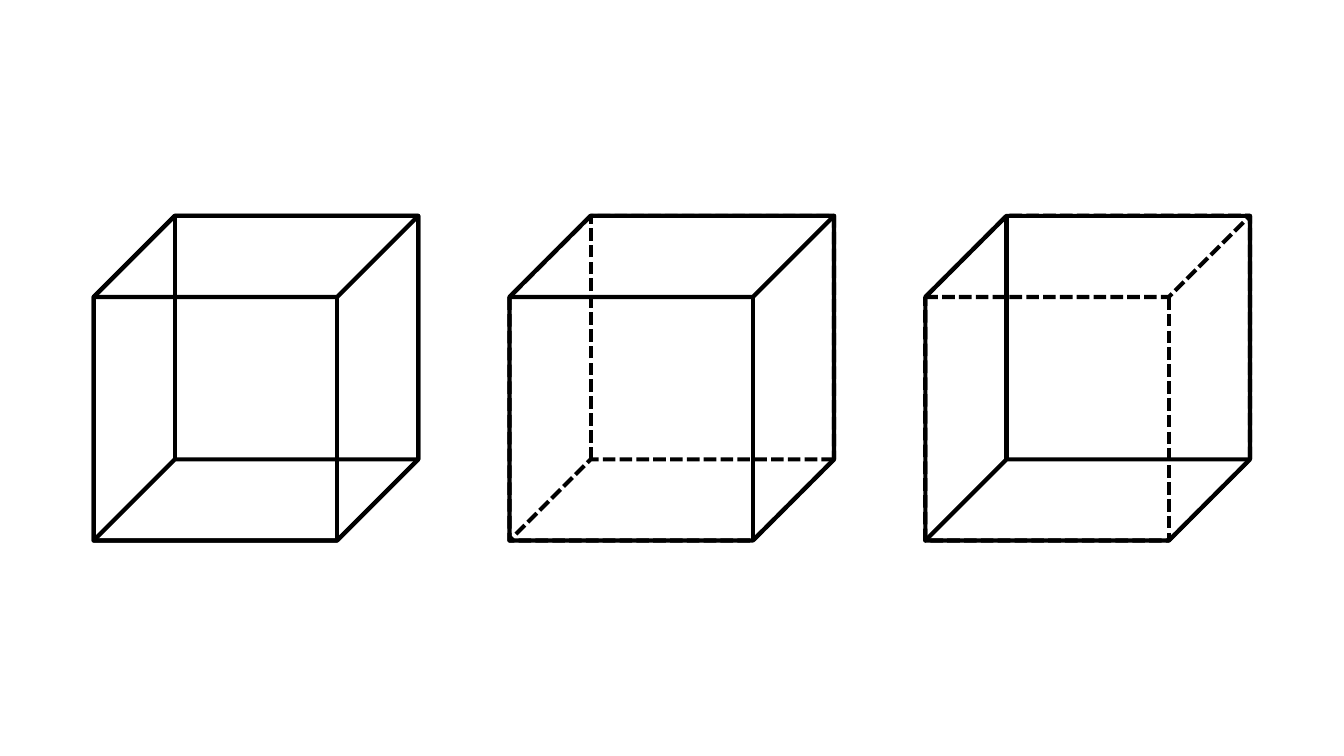
"""Draw three wire cubes, each made of two outlines turned half a circle apart."""
from dataclasses import dataclass

from pptx import Presentation
from pptx.dml.color import RGBColor
from pptx.enum.dml import MSO_LINE
from pptx.enum.shapes import MSO_SHAPE
from pptx.shapes.group import GroupShape
from pptx.slide import Slide
from pptx.util import Cm, Pt

CUBE = MSO_SHAPE.CUBE
SOLID = MSO_LINE.SOLID
DASH = MSO_LINE.SQUARE_DOT
COLORS = {"edge": "000000"}
LEFT, TOP, SIDE, STEP = 2.36, 5.44, 8.18, 10.48


@dataclass(frozen=True)
class Face:
    turn: int
    dash: MSO_LINE = SOLID


CUBES = (
    (Face(0), Face(180)),
    (Face(180, DASH), Face(0)),
    (Face(0, DASH), Face(180)),
)


def draw_face(group: GroupShape, left: float, face: Face) -> None:
    shape = group.shapes.add_shape(CUBE, Cm(left), Cm(TOP), Cm(SIDE), Cm(SIDE))
    shape.shadow.inherit = False
    shape.rotation = face.turn
    shape.fill.background()
    shape.line.color.rgb = RGBColor.from_string(COLORS["edge"])
    shape.line.width = Pt(3)
    shape.line.dash_style = face.dash


def draw_cube(slide: Slide, left: float, faces: tuple[Face, ...]) -> None:
    group = slide.shapes.add_group_shape()
    for face in faces:
        draw_face(group, left, face)


def main() -> None:
    deck = Presentation()
    deck.slide_width, deck.slide_height = Cm(33.87), Cm(19.05)
    slide = deck.slides.add_slide(deck.slide_layouts[6])
    for index, faces in enumerate(CUBES):
        draw_cube(slide, LEFT + index * STEP, faces)
    deck.save("out.pptx")


if __name__ == "__main__":
    main()
